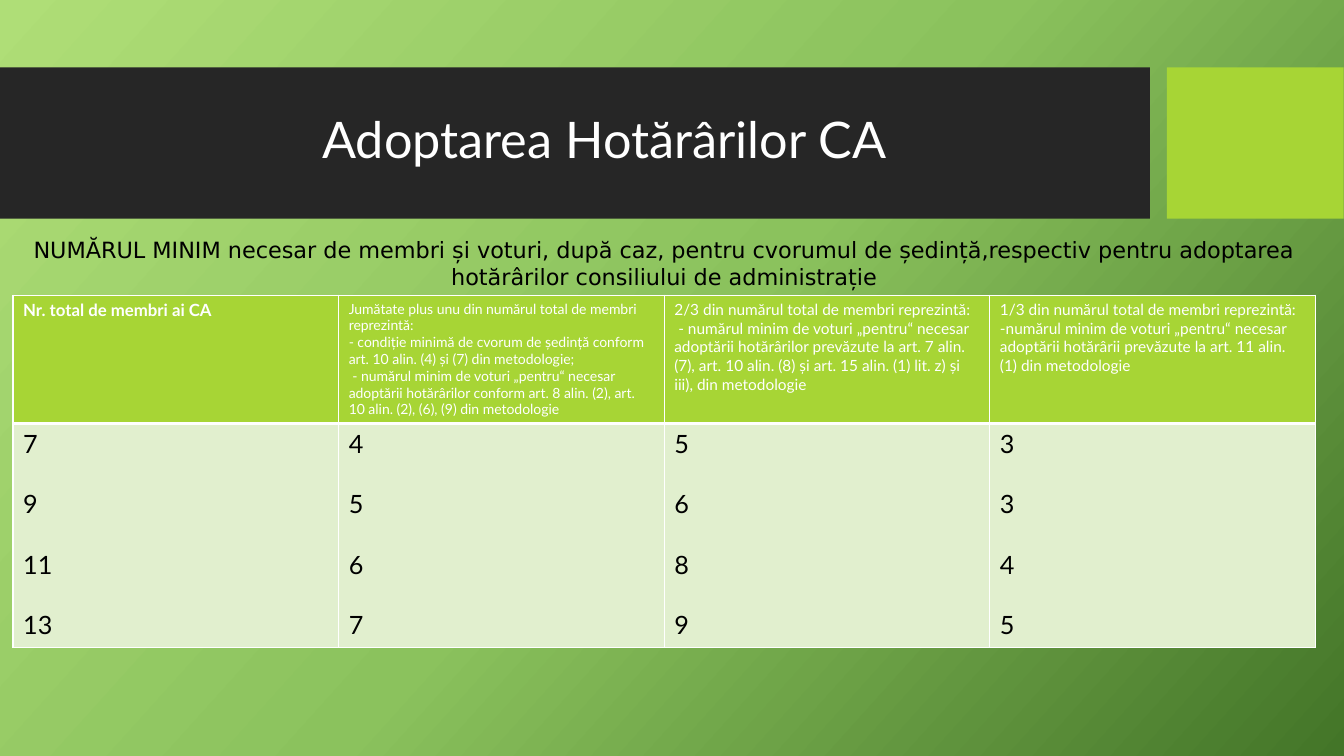
from copy import deepcopy
from dataclasses import dataclass

from lxml.etree import SubElement
from pptx import Presentation
from pptx.dml.color import RGBColor
from pptx.enum.shapes import MSO_SHAPE as SHAPE
from pptx.enum.text import MSO_ANCHOR as ANCHOR, PP_ALIGN as ALIGN
from pptx.oxml.ns import qn
from pptx.util import Cm, Pt

WHITE, BLACK, DARK, LIME, PALE = "FFFFFF", "000000", "262626", "A7D535", "E1EFCE"
TITLE = "Adoptarea Hotărârilor CA"
CAPTION = ("NUMĂRUL MINIM necesar de membri și voturi, după caz, pentru cvorumul de "
           "ședință,respectiv pentru adoptarea hotărârilor consiliului de administrație")


@dataclass
class Band:
    left: float
    width: float
    color: str


@dataclass
class Column:
    size: int
    header: list[str]
    values: list[int]
    bold: bool = False


BANDS = [Band(0, 28.98, DARK), Band(29.41, 4.45, LIME)]
COLUMNS = [
    Column(12, ["Nr. total de membri ai CA"], [7, 9, 11, 13], bold=True),
    Column(10, ["Jumătate plus unu din numărul total de membri reprezintă:",
                "- condiție minimă de cvorum de ședință conform art. 10 alin. (4) și (7) "
                "din metodologie;",
                " - numărul minim de voturi „pentru“ necesar adoptării hotărârilor conform "
                "art. 8 alin. (2), art. 10 alin. (2), (6), (9) din metodologie"],
           [4, 5, 6, 7]),
    Column(11, ["2/3 din numărul total de membri reprezintă:",
                " - numărul minim de voturi „pentru“ necesar adoptării hotărârilor prevăzute "
                "la art. 7 alin. (7), art. 10 alin. (8) și art. 15 alin. (1) lit. z) și iii), "
                "din metodologie"],
           [5, 6, 8, 9]),
    Column(11, ["1/3 din numărul total de membri reprezintă:",
                "-numărul minim de voturi „pentru“ necesar adoptării hotărârii prevăzute la "
                "art. 11 alin. (1) din metodologie"],
           [3, 3, 4, 5]),
]


def rgb(value: str) -> RGBColor:
    return RGBColor.from_string(value)


def write(tf, lines, size: float, color: str, font="Lato", bold=False, gap=0.0,
          align=ALIGN.LEFT) -> None:
    tf.word_wrap = True
    for i, line in enumerate(lines):
        p = tf.add_paragraph() if i else tf.paragraphs[0]
        p.alignment = align
        if i and gap:
            p.space_before = Pt(gap)
        r = p.add_run()
        r.text = str(line)
        r.font.size, r.font.name, r.font.bold = Pt(size), font, bold
        r.font.color.rgb = rgb(color)


def paint_background(s) -> None:
    fill = s.background.fill
    fill.gradient()
    fill.gradient_angle = 318
    last = s.background._cSld.findall(".//" + qn("a:gs"))[-1]
    last.addnext(deepcopy(last))
    colors = [(0, "AFDE77"), (0.5, "8BC25D"), (1, "437528")]
    for stop, (position, color) in zip(fill.gradient_stops, colors):
        stop.position, stop.color.rgb = position, rgb(color)


def add_band(s, band: Band) -> None:
    sp = s.shapes.add_shape(SHAPE.RECTANGLE, Cm(band.left), Cm(1.7), Cm(band.width), Cm(3.81))
    sp.shadow.inherit = False
    sp.fill.solid()
    sp.fill.fore_color.rgb = rgb(band.color)
    sp.line.fill.background()


def style_cell(cell, color: str, top: float, bottom: float) -> None:
    tc_pr = cell._tc.get_or_add_tcPr()
    for side, width in (("L", 1), ("R", 1), ("T", top), ("B", bottom)):
        ln = SubElement(tc_pr, qn(f"a:ln{side}"), w=str(Pt(width)))
        SubElement(SubElement(ln, qn("a:solidFill")), qn("a:srgbClr"), val=WHITE)
    cell.fill.solid()
    cell.fill.fore_color.rgb = rgb(color)


def add_votes_table(s) -> None:
    table = s.shapes.add_table(2, len(COLUMNS), Cm(0.33), Cm(7.44), Cm(32.82), Cm(8.87)).table
    table.rows[0].height, table.rows[1].height = Cm(3.23), Cm(5.64)
    for i, column in enumerate(COLUMNS):
        head, body = table.cell(0, i), table.cell(1, i)
        style_cell(head, LIME, 1, 3)
        write(head.text_frame, column.header, column.size, WHITE, bold=column.bold)
        style_cell(body, PALE, 3, 1)
        write(body.text_frame, column.values, 18, BLACK, gap=21.6)


def main() -> None:
    """Build the slide on council quorum and vote thresholds."""
    prs = Presentation()
    prs.slide_width, prs.slide_height = Cm(33.87), Cm(19.05)
    s = prs.slides.add_slide(prs.slide_layouts[5])
    paint_background(s)
    for band in BANDS:
        add_band(s, band)

    title = s.shapes.title
    s.shapes._spTree.append(title._element)
    title.left, title.top, title.width, title.height = Cm(1.88), Cm(2.08), Cm(26.7), Cm(3)
    title.text_frame.vertical_anchor = ANCHOR.MIDDLE
    write(title.text_frame, [TITLE], 36, WHITE, align=ALIGN.CENTER)
    title.text_frame.paragraphs[0].line_spacing = 0.9

    caption = s.shapes.add_textbox(Cm(0.33), Cm(5.82), Cm(32.82), Cm(1.63))
    write(caption.text_frame, [CAPTION], 16, BLACK, font="DejaVu Sans", align=ALIGN.CENTER)
    add_votes_table(s)
    prs.save("out.pptx")


if __name__ == "__main__":
    main()
